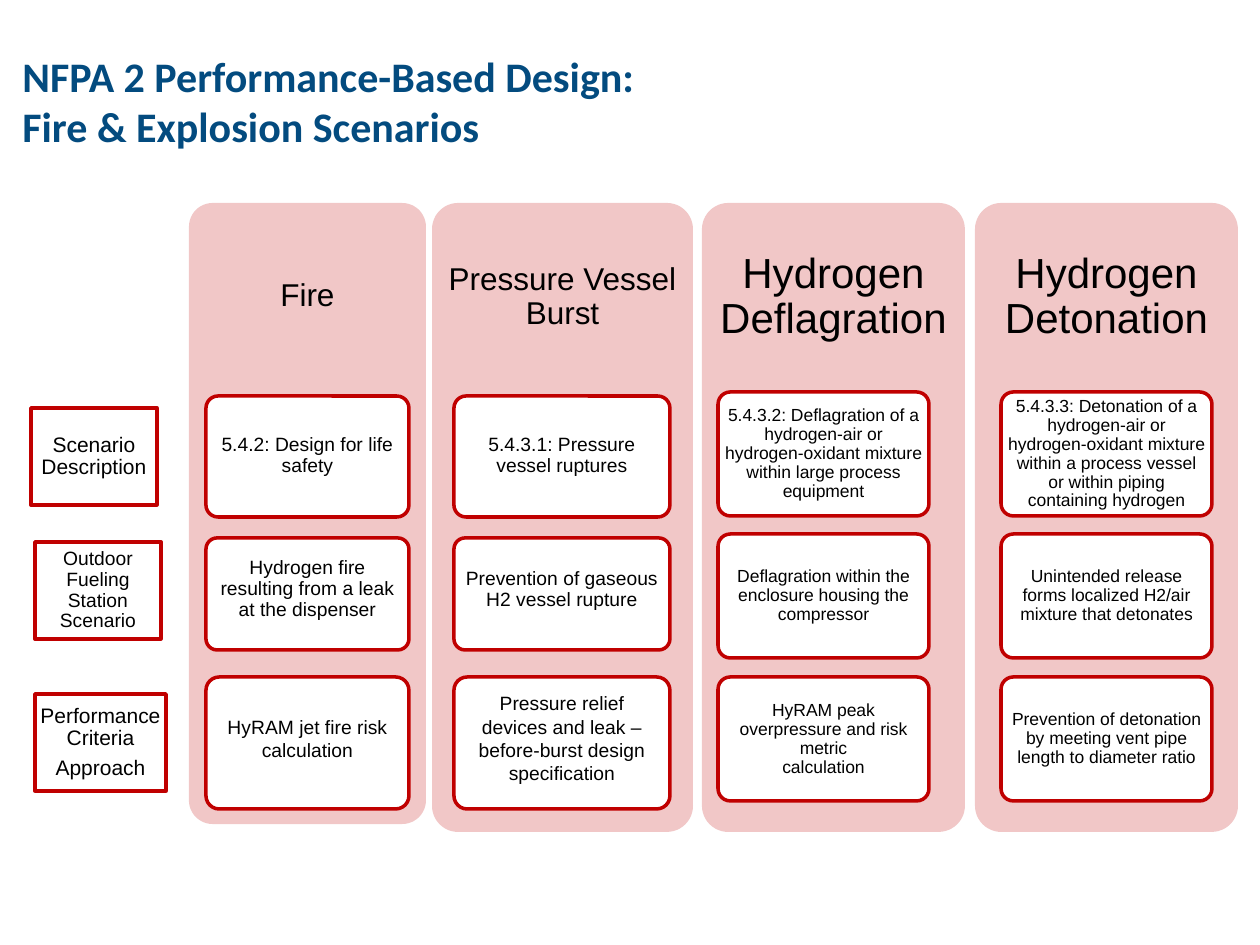
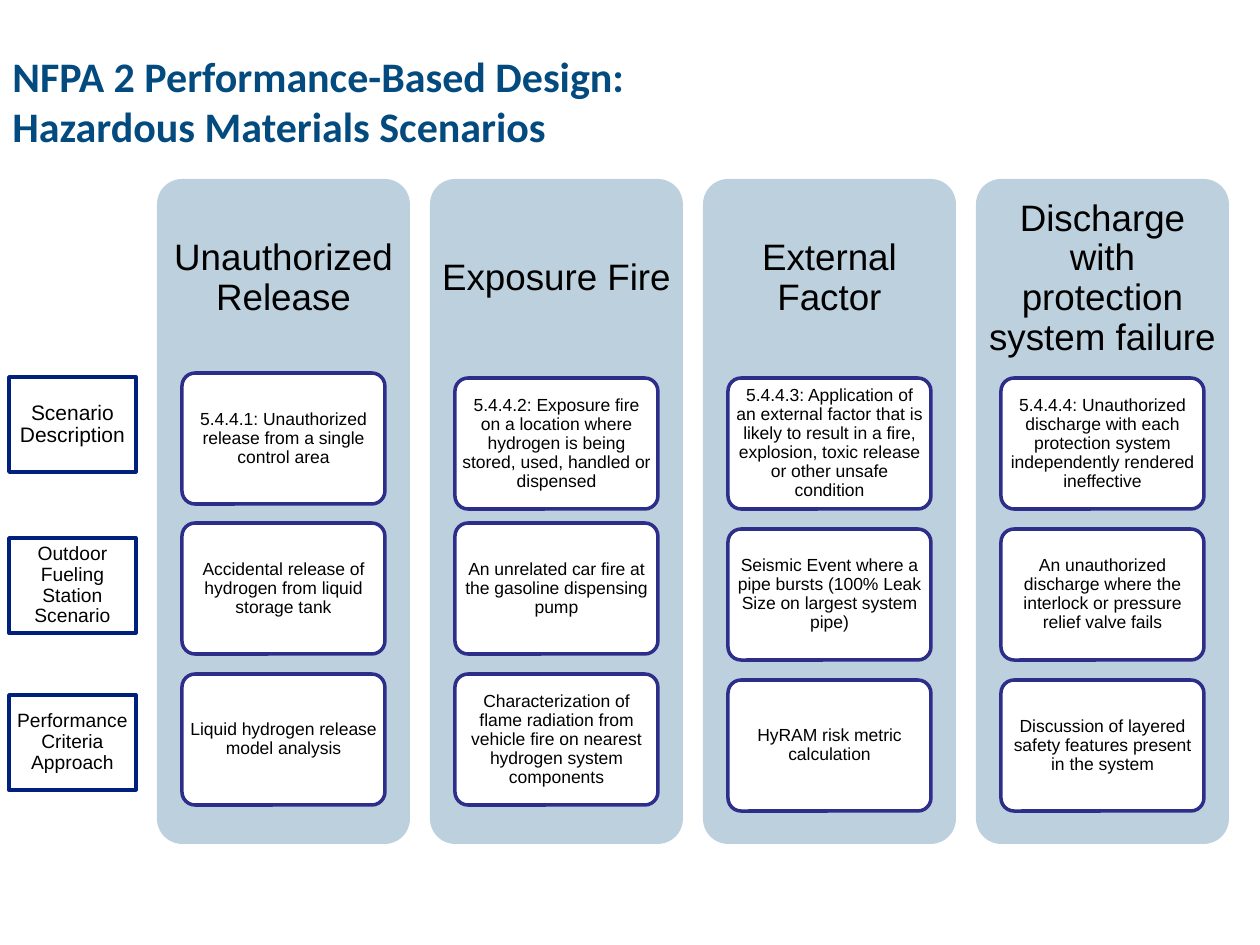
from dataclasses import dataclass

from lxml import etree
from pptx import Presentation
from pptx.dml.color import RGBColor
from pptx.enum.shapes import MSO_SHAPE
from pptx.enum.text import MSO_ANCHOR, PP_ALIGN
from pptx.oxml.ns import qn
from pptx.util import Emu, Pt

RECT, ROUND = MSO_SHAPE.RECTANGLE, MSO_SHAPE.ROUNDED_RECTANGLE
TOP, MIDDLE = MSO_ANCHOR.TOP, MSO_ANCHOR.MIDDLE
CENTER = PP_ALIGN.CENTER

PX_PER_INCH = 126
BLUE, RED, INDIGO, NAVY = "034B7F", "C00000", "2D2D8A", "00207E"
WHITE, BLACK = "FFFFFF", "000000"
BODY_FONT, TITLE_FONT = "Arial", "Calibri"
CORNER = 0.1
HEADING_SHARE = 0.3


@dataclass
class Theme:
    band: str
    opacity: int
    card_line: str
    label_line: str
    label_fill: str
    label_inset: int


@dataclass
class CardStyle:
    size: int
    inset: int
    drops: tuple = (0, 0, 0)  # extra bottom inset of each row
    spacing: tuple = (0.9, 0.9, 0.9)


FIRE_THEME = Theme(RED, 22, RED, RED, WHITE, 5)
HAZARD_THEME = Theme(BLUE, 26, INDIGO, NAVY, None, 7)
SMALL = CardStyle(10, 3)
LARGE = CardStyle(11, 8, (1, 9, 10), (0.9, 0.9, 1.0))


def px(n):
    return Emu(round(n * 914400 / PX_PER_INCH))


def rgb(color):
    return RGBColor.from_string(color)


def write(shape, text, size, inset, drop=0, spacing=0.9):
    """Centred body text; inset is (horizontal, vertical)."""
    tf = shape.text_frame
    tf.word_wrap = True
    tf.vertical_anchor = MIDDLE
    tf.margin_left = tf.margin_right = px(inset[0])
    tf.margin_top, tf.margin_bottom = px(inset[1]), px(inset[1] + drop)
    tf.text = text
    for p in tf.paragraphs:
        p.alignment = CENTER
        p.line_spacing = spacing
        p.space_after = Pt(round(size * 0.35))
        for r in p.runs:
            r.font.size, r.font.name = Pt(size), BODY_FONT
            r.font.color.rgb = rgb(BLACK)


def add_box(s, kind, box, fill, line=None, opacity=None):
    sp = s.shapes.add_shape(kind, *map(px, box))
    sp.shadow.inherit = False
    if kind == ROUND:
        sp.adjustments[0] = CORNER
    if fill:
        sp.fill.solid()
        sp.fill.fore_color.rgb = rgb(fill)
    else:
        sp.fill.background()
    if opacity:
        color = sp.fill._xPr.find(qn("a:solidFill"))[0]
        etree.SubElement(color, qn("a:alpha")).set("val", str(opacity * 1000))
    if line:
        sp.line.color.rgb = rgb(line)
        sp.line.width = Pt(2)
    else:
        sp.line.fill.background()
    return sp


def add_title(s, box, text):
    tf = s.shapes.add_textbox(*map(px, box)).text_frame
    tf.word_wrap = True
    tf.vertical_anchor = TOP
    tf.text = text
    for r in tf.paragraphs[0].runs:
        r.font.size, r.font.name, r.font.bold = Pt(24), TITLE_FONT, True
        r.font.color.rgb = rgb(BLUE)


def add_labels(s, theme, labels):
    for box, text, size in labels:
        sp = add_box(s, RECT, box, theme.label_fill, theme.label_line)
        write(sp, text, size, (theme.label_inset, 4))


def add_column(s, theme, box, heading, heading_size, cards, style):
    """Band with a heading; cards are (left, top, width, height, text) within it."""
    x, y, w, h = box
    add_box(s, ROUND, box, theme.band, opacity=theme.opacity)
    tb = s.shapes.add_textbox(*map(px, (x, y, w, h * HEADING_SHARE)))
    margin = heading_size // 2
    write(tb, heading, heading_size, (margin, margin))
    for (cx, cy, cw, ch, text), drop, spacing in zip(cards, style.drops, style.spacing):
        sp = add_box(s, ROUND, (x + cx, y + cy, cw, ch), WHITE, theme.card_line)
        write(sp, text, style.size, (style.inset, 2), drop, spacing)


def stack(left, width, tops, heights, texts):
    return [(left, top, width, height, text)
            for top, height, text in zip(tops, heights, texts)]


def fire_slide(prs):
    s = prs.slides.add_slide(prs.slide_layouts[6])
    add_title(s, (10, 44, 1061, 126),
              "NFPA 2 Performance-Based Design:\vFire & Explosion Scenarios")
    wide = ((189, 331, 474), (124, 124, 124))
    tall = ((193, 335, 474), (121, 112, 132))
    # Band left, width, height; heading, size; card left, width, rows, style; texts
    columns = [
        (189, 237, 621, "Fire", 18, 17, 203, tall, LARGE,
         ["5.4.2: Design for life safety",
          "Hydrogen fire resulting from a leak at the dispenser",
          "HyRAM jet fire risk calculation"]),
        (432, 261, 629, "Pressure Vessel Burst", 18, 22, 216, tall, LARGE,
         ["5.4.3.1: Pressure vessel ruptures",
          "Prevention of gaseous H2 vessel rupture",
          "Pressure relief devices and leak –before-burst design specification"]),
        (702, 263, 629, "Hydrogen Deflagration", 24, 16, 211, wide, SMALL,
         ["5.4.3.2: Deflagration of a hydrogen-air or hydrogen-oxidant mixture "
          "within large process equipment",
          "Deflagration within the enclosure housing the compressor",
          "HyRAM peak overpressure and risk metric\vcalculation"]),
        (975, 263, 629, "Hydrogen Detonation", 24, 26, 211, wide, SMALL,
         ["5.4.3.3: Detonation of a hydrogen-air or hydrogen-oxidant mixture "
          "within a process vessel or within piping containing hydrogen",
          "Unintended release forms localized H2/air mixture that detonates",
          "Prevention of detonation by meeting vent pipe length to diameter ratio"]),
    ]
    for x, w, h, heading, size, left, width, rows, style, texts in columns:
        add_column(s, FIRE_THEME, (x, 203, w, h), heading, size,
                   stack(left, width, *rows, texts), style)
    add_labels(s, FIRE_THEME, [
        ((31, 408, 126, 97), "Scenario Description", 12),
        ((35, 542, 126, 97), "Outdoor Fueling Station Scenario", 11),
        ((35, 694, 131, 97), "Performance Criteria\nApproach", 12),
    ])


def hazard_slide(prs):
    s = prs.slides.add_slide(prs.slide_layouts[6])
    add_title(s, (0, 44, 1229, 105),
              "NFPA 2 Performance-Based Design:\vHazardous Materials Scenarios")
    # Heading, card tops within the band, card texts
    columns = [
        ("Unauthorized Release", (194, 344, 495),
         ["5.4.4.1: Unauthorized release from a single control area",
          "Accidental release of hydrogen from liquid storage tank",
          "Liquid hydrogen release model analysis"]),
        ("Exposure Fire", (199, 344, 495),
         ["5.4.4.2: Exposure fire on a location where hydrogen is being stored, "
          "used, handled or dispensed",
          "An unrelated car fire at the gasoline dispensing pump",
          "Characterization of flame radiation from vehicle fire on nearest "
          "hydrogen system components"]),
        ("External Factor", (199, 350, 501),
         ["5.4.4.3: Application of an external factor that is likely to result "
          "in a fire, explosion, toxic release or other unsafe condition",
          "Seismic Event where a pipe bursts (100% Leak Size on largest system pipe)",
          "HyRAM risk metric calculation"]),
        ("Discharge with protection system failure", (199, 350, 501),
         ["5.4.4.4: Unauthorized discharge with each protection system "
          "independently rendered ineffective",
          "An unauthorized discharge where the interlock or pressure relief "
          "valve fails",
          "Discussion of layered safety features present in the system"]),
    ]
    for i, (heading, tops, texts) in enumerate(columns):
        add_column(s, HAZARD_THEME, (157 + 273 * i, 179, 253, 665), heading, 21,
                   stack(25, 203, tops, (131, 131, 131), texts), SMALL)
    add_labels(s, HAZARD_THEME, [
        ((9, 377, 127, 95), "Scenario Description", 12),
        ((9, 538, 127, 95), "Outdoor Fueling Station Scenario", 11),
        ((9, 695, 127, 95), "Performance Criteria Approach", 11),
    ])


def main():
    prs = Presentation()
    prs.slide_width, prs.slide_height = px(1260), px(945)
    fire_slide(prs)
    hazard_slide(prs)
    prs.save("out.pptx")


if __name__ == "__main__":
    main()
